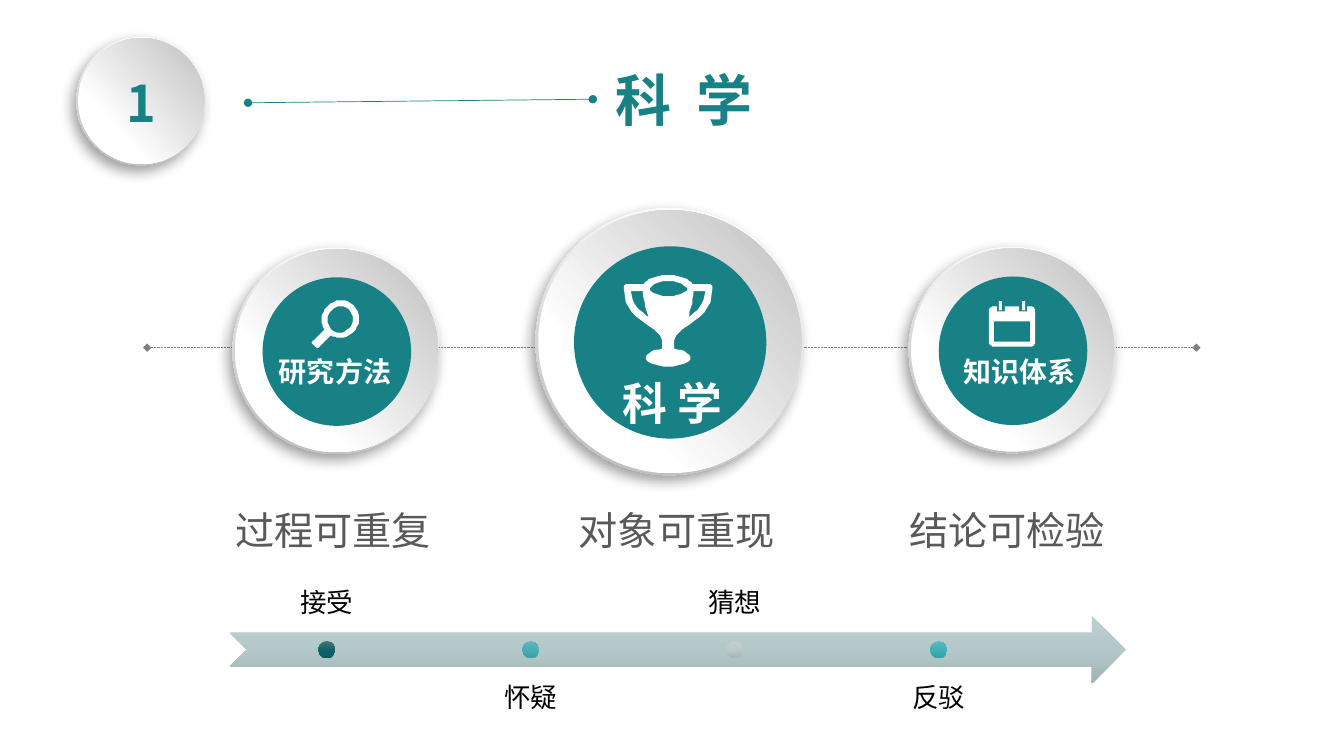
from dataclasses import dataclass
from itertools import product

from lxml.etree import SubElement
from pptx import Presentation
from pptx.dml.color import RGBColor
from pptx.enum.dml import MSO_LINE
from pptx.enum.shapes import MSO_CONNECTOR, MSO_SHAPE
from pptx.enum.text import MSO_ANCHOR, MSO_AUTO_SIZE, PP_ALIGN
from pptx.oxml.ns import qn
from pptx.util import Cm, Pt

FONT = "Noto Sans CJK SC"
TEAL, WHITE, BLACK, GREY, DARK_GREY = "188186", "FFFFFF", "000000", "808080", "595959"

Stops = list[tuple[int, str]]
# A contour is a start point, then lines (x, y) and cubic curves (x1, y1, x2, y2, x, y)
Contour = list[tuple[int, ...]]
ICON_UNIT = Cm(2.54) / 100
CURVE_STEPS = 8

MAGNIFIER: list[Contour] = [
    [(1, 43), (4, 46), (5, 47, 7, 47, 8, 46), (19, 35), (22, 36, 25, 37, 28, 37),
     (38, 37, 47, 29, 47, 19), (47, 8, 39, 0, 29, 0), (19, 0, 10, 9, 10, 19),
     (10, 23, 11, 26, 13, 29), (2, 40), (0, 41, 0, 42, 1, 43)],
    [(28, 32), (21, 32, 16, 26, 16, 19), (16, 12, 22, 6, 29, 6),
     (36, 6, 41, 12, 41, 19), (41, 25, 35, 32, 28, 32)],
]
TROPHY: list[Contour] = [
    [(50, 67), (50, 60, 55, 56, 64, 50), (75, 43, 88, 34, 88, 13), (88, 11, 87, 9, 85, 9),
     (68, 9), (66, 5, 58, 0, 44, 0), (30, 0, 23, 5, 20, 9), (3, 9), (1, 9, 0, 11, 0, 13),
     (0, 34, 13, 43, 24, 50), (33, 56, 38, 60, 38, 67), (38, 73), (29, 74, 22, 78, 22, 82),
     (22, 87, 32, 91, 44, 91), (56, 91, 66, 87, 66, 82), (66, 78, 59, 74, 50, 73)],
    [(64, 42), (66, 36, 68, 28, 69, 16), (81, 16), (80, 30, 72, 36, 64, 42)],
    [(44, 6), (57, 6, 63, 12, 63, 14), (63, 16, 57, 21, 44, 21),
     (31, 21, 26, 16, 26, 14), (26, 12, 31, 6, 44, 6)],
    [(7, 16), (19, 16), (20, 28, 22, 36, 25, 42), (16, 36, 8, 30, 7, 16)],
]
CALENDAR: list[Contour] = [
    [(41, 5), (38, 5), (38, 10), (30, 10), (30, 5), (16, 5), (16, 10), (8, 10), (8, 5), (5, 5),
     (3, 5, 0, 7, 0, 10), (0, 40), (0, 43, 3, 45, 5, 45), (41, 45),
     (44, 45, 46, 43, 46, 40), (46, 10), (46, 7, 44, 5, 41, 5)],
    [(41, 40), (5, 40), (5, 20), (41, 20)],
    [(13, 0), (10, 0), (10, 9), (13, 9)],
    [(36, 0), (33, 0), (33, 9), (36, 9)],
]


@dataclass
class Label:
    text: str
    left: float
    top: float
    width: float
    height: float
    size: int
    color: str
    bold: bool = False
    align: PP_ALIGN = PP_ALIGN.CENTER
    anchor: MSO_ANCHOR = MSO_ANCHOR.TOP
    margins: tuple[float, float] = (0.25, 0.13)
    grow: bool = True


@dataclass
class Topic:
    cx: float
    cy: float
    diameter: float
    icon: list[Contour]
    icon_left: float
    icon_top: float
    label: Label


@dataclass
class Step:
    text: str
    stops: Stops


def rgb(color: str) -> RGBColor:
    return RGBColor.from_string(color)


def add_label(label: Label):
    s = slide.shapes.add_textbox(Cm(label.left), Cm(label.top), Cm(label.width), Cm(label.height))
    tf = s.text_frame
    tf.text = label.text
    tf.word_wrap = True
    tf.auto_size = MSO_AUTO_SIZE.SHAPE_TO_FIT_TEXT if label.grow else MSO_AUTO_SIZE.NONE
    tf.vertical_anchor = label.anchor
    tf.margin_left = tf.margin_right = Cm(label.margins[0])
    tf.margin_top = tf.margin_bottom = Cm(label.margins[1])
    p = tf.paragraphs[0]
    p.alignment = label.align
    r = p.runs[0]
    r.font.name, r.font.size, r.font.bold = FONT, Pt(label.size), label.bold
    r.font.color.rgb = rgb(label.color)
    SubElement(r.font._element, qn("a:ea"), typeface=FONT)
    return s


def add_preset(kind: MSO_SHAPE, left: float, top: float, width: float, height: float,
               fill: str | Stops, angle: int = 90):
    s = slide.shapes.add_shape(kind, Cm(left), Cm(top), Cm(width), Cm(height))
    s.shadow.inherit = False
    s.line.fill.background()
    if isinstance(fill, str):
        s.fill.solid()
        s.fill.fore_color.rgb = rgb(fill)
        return s
    s.fill.gradient()
    grad = s._element.spPr.find(qn("a:gradFill"))
    for child in list(grad):
        grad.remove(child)
    stops = SubElement(grad, qn("a:gsLst"))
    for position, color in fill:
        gs = SubElement(stops, qn("a:gs"), pos=str(position * 1000))
        SubElement(gs, qn("a:srgbClr"), val=color)
    SubElement(grad, qn("a:lin"), ang=str(angle * 60000), scaled="0")
    return s


def add_circle(cx: float, cy: float, d: float, fill: str | Stops, angle: int = 90):
    return add_preset(MSO_SHAPE.OVAL, cx - d / 2, cy - d / 2, d, d, fill, angle)


def add_badge(cx: float, cy: float, d: float) -> None:
    rim = add_circle(cx, cy, d, [(17, WHITE), (88, "B8B8B8")], 45)
    rim.rotation = 62.3
    shadow = SubElement(rim._element.spPr.find(qn("a:effectLst")), qn("a:outerShdw"),
                        blurRad=str(Pt(10)), dist=str(Pt(5)), dir=str(123 * 60000),
                        algn="ctr", rotWithShape="0")
    color = SubElement(shadow, qn("a:srgbClr"), val=BLACK)
    SubElement(color, qn("a:alpha"), val="39000")
    face = add_circle(cx + 0.02, cy, d * 0.985, [(29, WHITE), (98, "BFBFBF")], 45)
    face.rotation = 273


def flatten(contour: Contour) -> list[tuple[float, float]]:
    points = [contour[0]]
    for segment in contour[1:]:
        if len(segment) == 2:
            points.append(segment)
            continue
        start, c1, c2, end = points[-1], segment[:2], segment[2:4], segment[4:]
        for t in (i / CURVE_STEPS for i in range(1, CURVE_STEPS + 1)):
            u = 1 - t
            points.append(tuple(u**3 * a + 3 * u * u * t * b + 3 * u * t * t * c + t**3 * e
                                for a, b, c, e in zip(start, c1, c2, end)))
    return points


def add_icon(contours: list[Contour], left: float, top: float) -> None:
    first, *others = [flatten(contour) for contour in contours]
    builder = slide.shapes.build_freeform(*first[0], scale=ICON_UNIT)
    builder.add_line_segments(first[1:])
    for points in others:
        builder.move_to(*points[0])
        builder.add_line_segments(points[1:])
    s = builder.convert_to_shape(Cm(left), Cm(top))
    s.shadow.inherit = False
    s.fill.solid()
    s.fill.fore_color.rgb = rgb(WHITE)
    s.line.fill.background()


def add_line(x1: float, y1: float, x2: float, y2: float, color: str, end: str):
    s = slide.shapes.add_connector(MSO_CONNECTOR.STRAIGHT, Cm(x1), Cm(y1), Cm(x2), Cm(y2))
    s.line.color.rgb = rgb(color)
    s.line.width = Pt(0.5)
    for tag in ("a:headEnd", "a:tailEnd"):
        SubElement(s.line._get_or_add_ln(), qn(tag), type=end)
    SubElement(s._element.spPr, qn("a:effectLst"))
    return s


prs = Presentation()
prs.slide_width, prs.slide_height = Cm(33.87), Cm(19.05)
slide = prs.slides.add_slide(prs.slide_layouts[6])

# Heading
add_badge(3.54, 2.55, 3.23)
add_label(Label("1", 1.88, 1.7, 3.35, 1.8, 36, TEAL, True))
title = add_label(Label("科 学", 14.94, 1.52, 5.05, 1.96, 40, TEAL, True,
                        PP_ALIGN.LEFT, margins=(0.57, 0.13)))
title.text_frame.paragraphs[0].runs[0].font._element.set("spc", "450")
add_line(6.25, 2.59, 14.94, 2.5, TEAL, "oval").end_connect(title, 1)

# Topics on a dotted line
add_line(3.71, 8.76, 30.15, 8.76, GREY, "diamond").line.dash_style = MSO_LINE.ROUND_DOT
TOPICS = [
    Topic(8.46, 8.84, 5.2, MAGNIFIER, 7.85, 7.57,
          Label("研究方法", 6.58, 8.81, 3.73, 1.12, 20, WHITE, True)),
    Topic(16.86, 8.61, 6.73, TROPHY, 15.72, 6.93,
          Label("科 学", 14.94, 9.35, 4.01, 1.63, 32, WHITE, True)),
    Topic(25.5, 8.82, 5.2, CALENDAR, 24.92, 7.59,
          Label("知识体系", 23.98, 8.81, 3.43, 1.12, 20, WHITE, True)),
]
for topic in TOPICS:
    add_badge(topic.cx, topic.cy, topic.diameter)
    add_circle(topic.cx + 0.03, topic.cy + 0.02, topic.diameter * 0.72, TEAL)
    add_icon(topic.icon, topic.icon_left, topic.icon_top)
    add_label(topic.label)

# Captions
for text, left in [("过程可重复", 4.52), ("对象可重现", 13.18), ("结论可检验", 21.51)]:
    add_label(Label(text, left, 12.58, 7.75, 1.55, 28, DARK_GREY,
                    anchor=MSO_ANCHOR.MIDDLE, margins=(0.33, 0.18)))

# Timeline with labels alternating above and below
LEFT, PITCH, LABEL_W = 5.79, 5.14, 4.9
STEPS = [
    Step("接受", [(0, "4C7477"), (50, "0E6367"), (100, "095B5F")]),
    Step("怀疑", [(0, "66B4BA"), (50, "47AEB6"), (100, "3B9FA6")]),
    Step("猜想", [(0, "C5CFD0"), (50, "BBC9CA"), (100, "A6B3B4")]),
    Step("反驳", [(0, "60B6BD"), (50, "3EB0B8"), (100, "33A0A8")]),
]
SIDES = [(14.25, MSO_ANCHOR.BOTTOM), (16.79, MSO_ANCHOR.TOP)]
add_preset(MSO_SHAPE.NOTCHED_RIGHT_ARROW, LEFT, 15.52, 22.58, 1.7,
           [(0, "BECED0"), (50, "B4C8CA"), (100, "9FB3B5")])
for i, (step, (_, (top, anchor))) in enumerate(zip(STEPS, product(range(2), SIDES))):
    left = LEFT + i * PITCH
    add_label(Label(step.text, left, top, LABEL_W, 1.7, 19, BLACK,
                    anchor=anchor, margins=(0.38, 0.38), grow=False))
    add_circle(left + LABEL_W / 2, 16.37, 0.43, step.stops)

prs.save("out.pptx")
